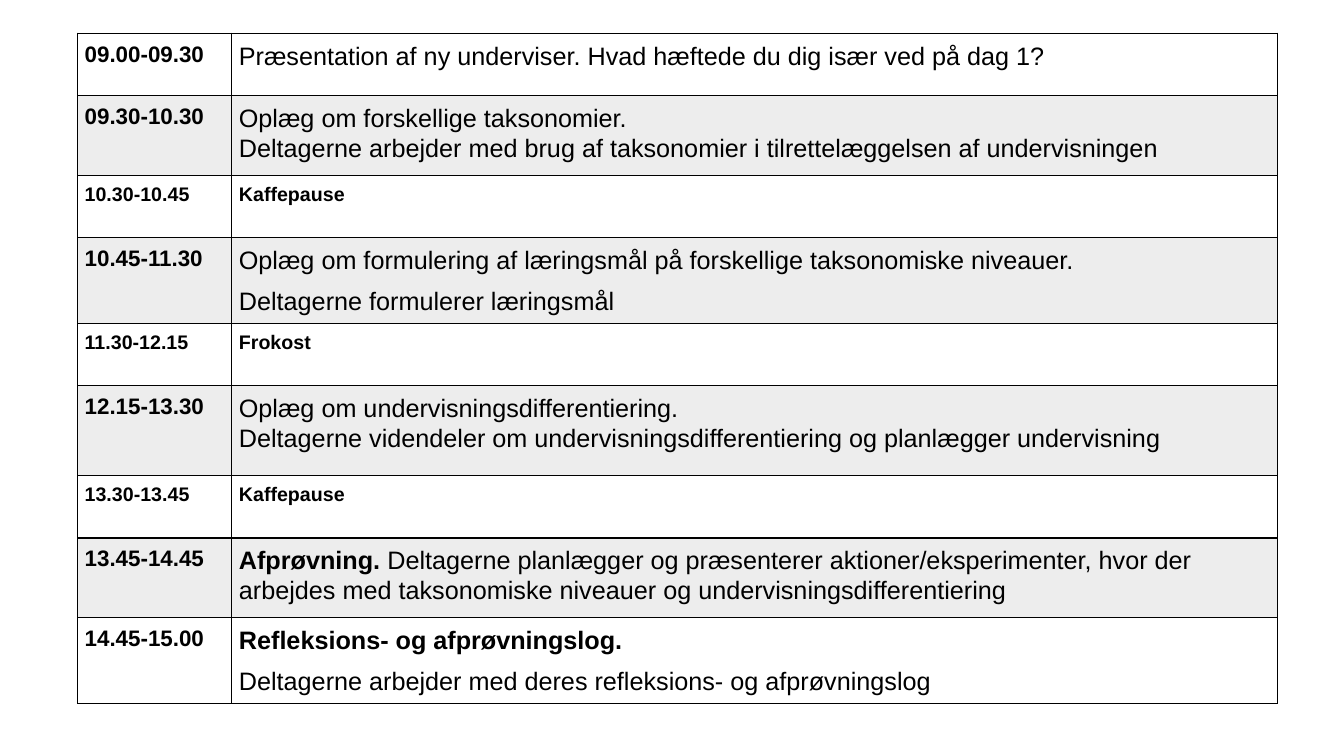
"""Build a one-page day programme as a two-column table."""
from lxml import etree
from pptx import Presentation
from pptx import util as u
from pptx.dml.color import RGBColor
from pptx.oxml import parse_xml
from pptx.oxml.ns import nsdecls, qn

WIDTH, HEIGHT = 13.33, 7.5
LEFT, TOP = 0.77, 0.33
COLUMNS = (1.53, 10.37)
INSET = 0.07
FONT, INK, PAPER, SHADE, SHADE_ALPHA = "Arial", "000000", "FFFFFF", "A5A5A5", 20
BREAK_SIZE, TIME_SIZE, TOPIC_SIZE = 14, 16, 18
LINE_SPACING, GAP = 1.07, 8

# time, row height, space after paragraphs, paragraphs as (bold lead, plain text)
PROGRAMME = [
    ("09.00-09.30", 0.62, 0, [
        ("", "Præsentation af ny underviser. Hvad hæftede du dig især ved på dag 1?")]),
    ("09.30-10.30", 0.79, 0, [
        ("", "Oplæg om forskellige taksonomier."),
        ("", "Deltagerne arbejder med brug af taksonomier i tilrettelæggelsen af undervisningen")]),
    ("10.30-10.45", 0.62, GAP, [("Kaffepause", "")]),
    ("10.45-11.30", 0.79, GAP, [
        ("", "Oplæg om formulering af læringsmål på forskellige taksonomiske niveauer."),
        ("", "Deltagerne formulerer læringsmål")]),
    ("11.30-12.15", 0.62, GAP, [("Frokost", "")]),
    ("12.15-13.30", 0.89, 0, [
        ("", "Oplæg om undervisningsdifferentiering."),
        ("", "Deltagerne videndeler om undervisningsdifferentiering og planlægger undervisning")]),
    ("13.30-13.45", 0.62, GAP, [("Kaffepause", "")]),
    ("13.45-14.45", 0.79, GAP, [
        ("Afprøvning. ", "Deltagerne planlægger og præsenterer aktioner/eksperimenter, hvor der "
         "arbejdes med taksonomiske niveauer og undervisningsdifferentiering")]),
    ("14.45-15.00", 0.79, GAP, [
        ("Refleksions- og afprøvningslog.", ""),
        ("", "Deltagerne arbejder med deres refleksions- og afprøvningslog")]),
]
BREAKS = ("Kaffepause", "Frokost")


def color(value):
    """Turn a hex string into a colour."""
    return RGBColor.from_string(value)


def style_cell(cell, shaded):
    """Give a cell its margins, borders and fill."""
    cell.margin_left = cell.margin_right = u.Inches(INSET)
    cell.margin_top = cell.margin_bottom = u.Inches(INSET)
    properties = cell._tc.get_or_add_tcPr()
    for side in ("lnL", "lnR", "lnT", "lnB"):
        properties.append(parse_xml(
            f'<a:{side} {nsdecls("a")} w="{u.Pt(1)}"><a:solidFill>'
            f'<a:srgbClr val="{INK}"/></a:solidFill></a:{side}>'))
    cell.fill.solid()
    cell.fill.fore_color.rgb = color(SHADE if shaded else PAPER)
    if shaded:
        tone = properties.find(qn("a:solidFill")).find(qn("a:srgbClr"))
        etree.SubElement(tone, qn("a:alpha")).set("val", str(SHADE_ALPHA * 1000))


def write_cell(cell, paragraphs, size, gap):
    """Write paragraphs of bold lead and plain text."""
    frame = cell.text_frame
    for index, parts in enumerate(paragraphs):
        para = frame.add_paragraph() if index else frame.paragraphs[0]
        para.line_spacing, para.space_after = LINE_SPACING, u.Pt(gap)
        for words, bold in zip(parts, (True, False)):
            if words:
                span = para.add_run()
                span.text = words
                span.font.name, span.font.size, span.font.bold = FONT, u.Pt(size), bold
                span.font.color.rgb = color(INK)


def main():
    """Lay out the programme and save the deck."""
    deck = Presentation()
    deck.slide_width, deck.slide_height = u.Inches(WIDTH), u.Inches(HEIGHT)
    page = deck.slides.add_slide(deck.slide_layouts[6])
    total = sum(height for _, height, _, _ in PROGRAMME)
    table = page.shapes.add_table(
        len(PROGRAMME), len(COLUMNS), u.Inches(LEFT), u.Inches(TOP),
        u.Inches(sum(COLUMNS)), u.Inches(total)).table
    table.first_row = table.horz_banding = False
    for column, width in zip(table.columns, COLUMNS):
        column.width = u.Inches(width)
    for index, (time, height, gap, topics) in enumerate(PROGRAMME):
        table.rows[index].height = u.Inches(height)
        is_break = topics[0][0] in BREAKS
        time_size, topic_size = (BREAK_SIZE, BREAK_SIZE) if is_break else (TIME_SIZE, TOPIC_SIZE)
        time_cell, topic_cell = table.cell(index, 0), table.cell(index, 1)
        for cell in (time_cell, topic_cell):
            style_cell(cell, shaded=index % 2 == 1)
        write_cell(time_cell, [(time, "")], time_size, GAP)
        write_cell(topic_cell, topics, topic_size, gap)
    deck.save("out.pptx")


if __name__ == "__main__":
    main()
